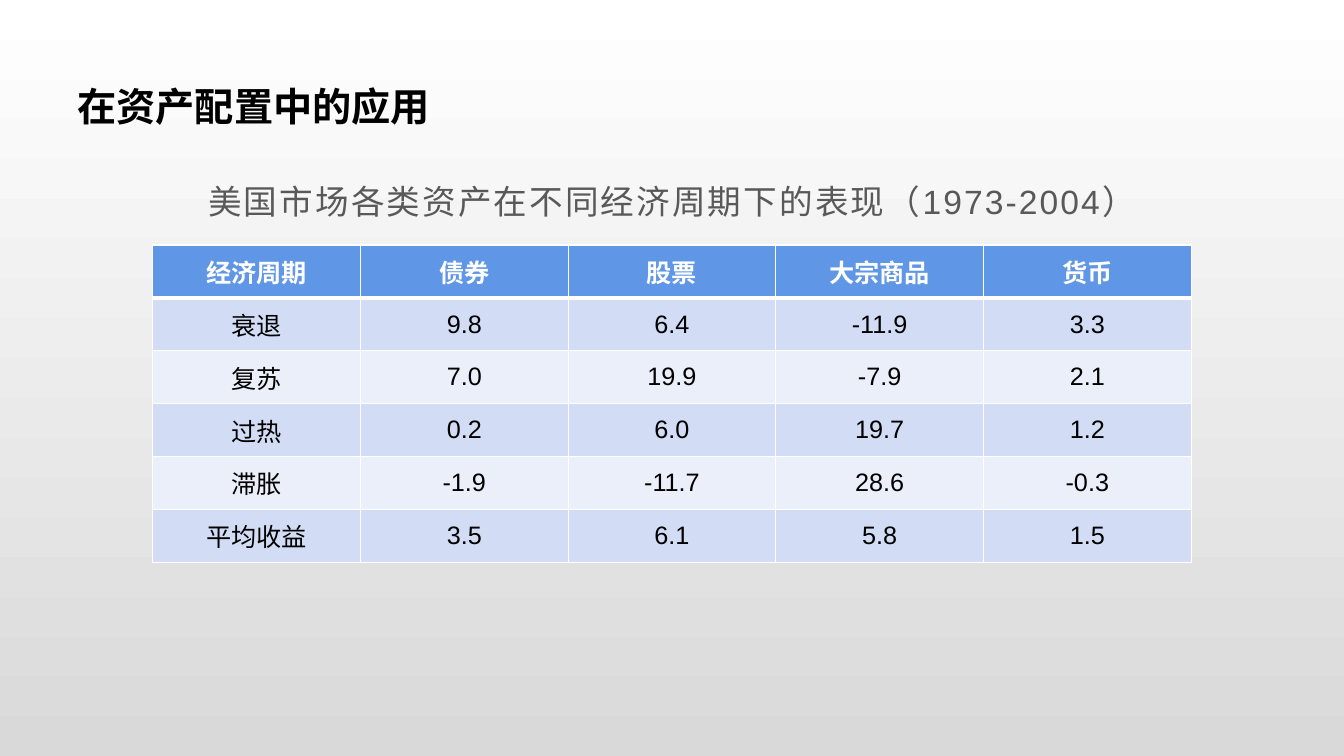
from lxml import etree
from pptx import Presentation
from pptx.dml.color import RGBColor
from pptx.enum.text import MSO_ANCHOR, PP_ALIGN
from pptx.oxml.ns import qn
from pptx.util import Inches, Pt

MID, TOP = MSO_ANCHOR.MIDDLE, MSO_ANCHOR.TOP
LEFT, CENTER = PP_ALIGN.LEFT, PP_ALIGN.CENTER

# Content
TITLE = "在资产配置中的应用"
CAPTION = "美国市场各类资产在不同经济周期下的表现（1973-2004）"
ROWS = [
    ("经济周期", "债券", "股票", "大宗商品", "货币"),
    ("衰退", "9.8", "6.4", "-11.9", "3.3"),
    ("复苏", "7.0", "19.9", "-7.9", "2.1"),
    ("过热", "0.2", "6.0", "19.7", "1.2"),
    ("滞胀", "-1.9", "-11.7", "28.6", "-0.3"),
    ("平均收益", "3.5", "6.1", "5.8", "1.5"),
]

# Look
FONT = "Arial"
WHITE, BLACK, GREY = "FFFFFF", "000000", "595959"
BACK = (WHITE, "D9D9D9")
HEAD, BANDS = "6096E6", ("EAEFFA", "D2DDF5")
THIN, THICK = 1, 3

# Layout, in inches
WIDE, HIGH = 13.33, 7.5
EDGE = 0.67
COL, ROW = 2.06, 0.525
GRID_TOP = 2.43


def color(code):
    return RGBColor.from_string(code)


def write(frame, text, size, code, bold=False, align=LEFT):
    para = frame.paragraphs[0]
    para.alignment = align
    run = para.add_run()
    run.text = text
    run.font.name, run.font.size, run.font.bold = FONT, Pt(size), bold
    run.font.color.rgb = color(code)
    return para, run


def add_text(slide, top, high, anchor, *args, **style):
    box = slide.shapes.add_textbox(
        Inches(EDGE), Inches(top), Inches(WIDE - 2 * EDGE), Inches(high))
    frame = box.text_frame
    frame.word_wrap, frame.vertical_anchor = True, anchor
    return write(frame, *args, **style)


def add_edge(cell, side, width):
    line = etree.SubElement(
        cell._tc.get_or_add_tcPr(), qn("a:ln" + side), w=str(Pt(width)))
    fill = etree.SubElement(line, qn("a:solidFill"))
    etree.SubElement(fill, qn("a:srgbClr"), val=WHITE)


def add_grid(slide):
    rows, cols = len(ROWS), len(ROWS[0])
    wide = cols * COL
    table = slide.shapes.add_table(
        rows, cols, Inches((WIDE - wide) / 2), Inches(GRID_TOP),
        Inches(wide), Inches(rows * ROW)).table
    for r, row in enumerate(ROWS):
        head = r == 0
        edges = {"L": THIN, "R": THIN,
                 "T": THICK if r == 1 else THIN,
                 "B": THICK if head else THIN}
        for c, text in enumerate(row):
            cell = table.cell(r, c)
            cell.vertical_anchor = MID
            for side, width in edges.items():
                add_edge(cell, side, width)
            cell.fill.solid()
            cell.fill.fore_color.rgb = color(HEAD if head else BANDS[r % 2])
            write(cell.text_frame, text, 18, WHITE if head else BLACK,
                  bold=head, align=CENTER)


def main():
    deck = Presentation()
    deck.slide_width, deck.slide_height = Inches(WIDE), Inches(HIGH)
    slide = deck.slides.add_slide(deck.slide_layouts[6])

    # Background, running from top to bottom
    fill = slide.background.fill
    fill.gradient()
    fill.gradient_angle = 270
    for stop, code, place in zip(fill.gradient_stops, BACK, (0, 1)):
        stop.color.rgb, stop.position = color(code), place

    # Title and caption
    add_text(slide, 0.67, 0.77, MID, TITLE, 28, BLACK, bold=True)
    para, run = add_text(slide, 1.63, 5.2, TOP, CAPTION, 24, GREY, align=CENTER)
    para.line_spacing, para.space_after = 1.3, Pt(10)
    run.font._element.set("spc", "150")

    # Table of returns
    add_grid(slide)
    deck.save("out.pptx")


if __name__ == "__main__":
    main()
